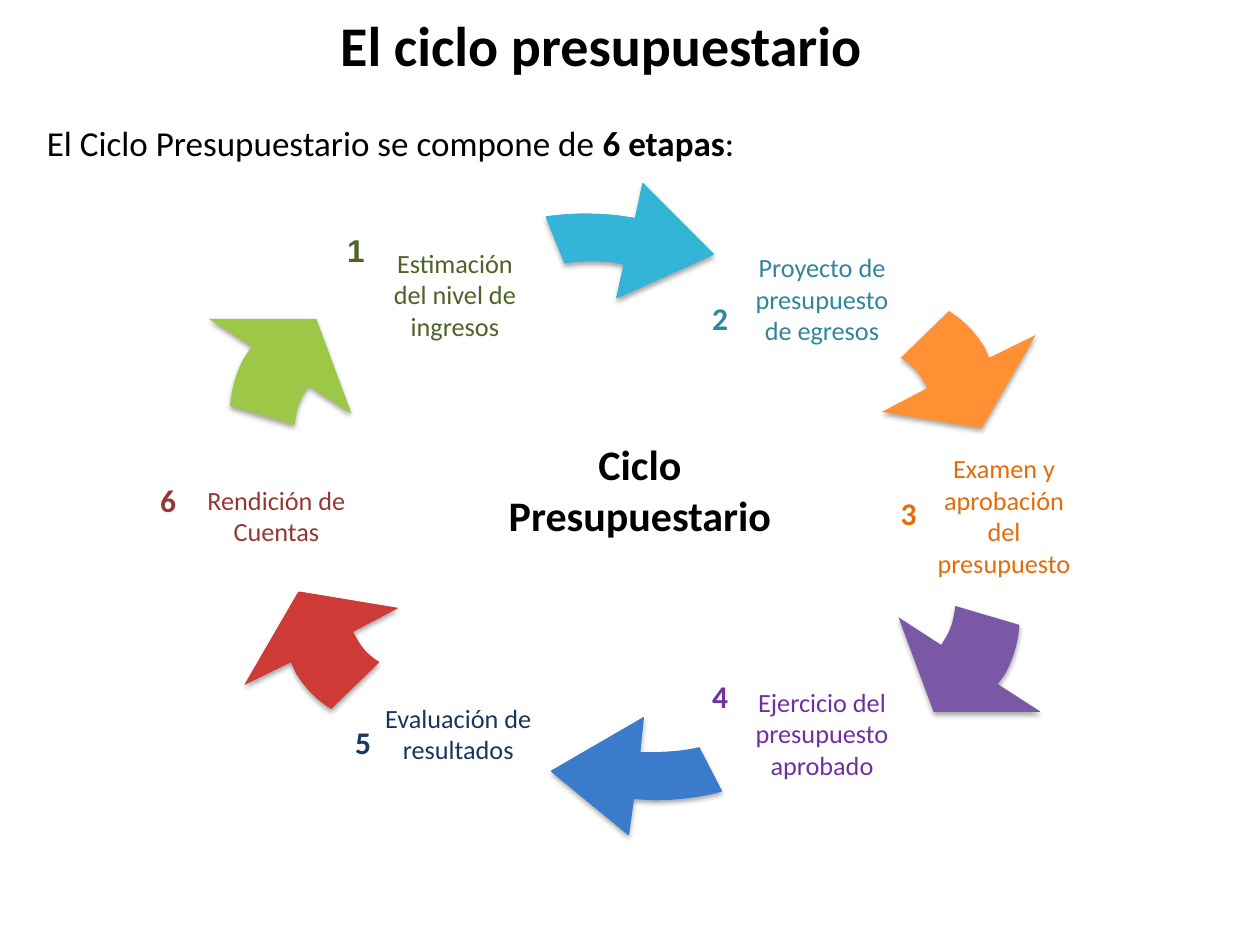
from dataclasses import dataclass
from math import cos, radians, sin

from lxml import etree
from pptx import Presentation
from pptx.dml.color import RGBColor
from pptx.enum.text import MSO_ANCHOR, MSO_AUTO_SIZE, PP_ALIGN
from pptx.oxml.ns import qn
from pptx.util import Pt

CENTER, LEFT, JUSTIFY = PP_ALIGN.CENTER, PP_ALIGN.LEFT, PP_ALIGN.JUSTIFY
TOP, MIDDLE = MSO_ANCHOR.TOP, MSO_ANCHOR.MIDDLE
FIXED_SIZE = MSO_AUTO_SIZE.NONE
FONT = "Calibri"
COLORS = {
    "black": "000000", "olive": "4F6228", "teal": "31859C", "orange": "E46C0A",
    "purple": "7030A0", "navy": "17375E", "maroon": "953735",
}
CURVE_STEPS = 12
LABEL_SIZE = (87.84, 60.48)
NUMBER_SIZE = (23.04, 33.12)
WIDE, TALL = (236.2, 162.7), (162.7, 236.2)

Point = tuple[float, float]


@dataclass(frozen=True)
class Stage:
    number: str
    label: str
    color: str
    number_at: Point
    label_at: Point
    number_font: str = FONT


@dataclass(frozen=True)
class Arrow:
    """Outline order: inner head corner, inner curve, outer curve,
    outer head corner, outer barb, tip, inner barb."""
    shades: tuple[str, str]
    rotation: int
    frame_at: Point
    frame_size: Point
    outline: list[Point]


STAGES = [
    Stage("1", "Estimación del nivel de ingresos", "olive", (191.3, 128.3), (216, 137.8), "Arial"),
    Stage("2", "Proyecto de presupuesto de egresos", "teal", (399.8, 167.3), (425.8, 140.6)),
    Stage("3", "Examen y aprobación del presupuesto", "orange", (507.6, 278.7), (529.8, 264.5)),
    Stage("4", "Ejercicio del presupuesto aprobado", "purple", (399.8, 383.3), (425.8, 388.9)),
    Stage("5", "Evaluación de resultados", "navy", (195.8, 409.7), (217.9, 388.9)),
    Stage("6", "Rendición de Cuentas", "maroon", (84.4, 271.5), (114, 264.5)),
]

TOP_ARROW = [
    (356.4, 151.2), (349.9, 149.8), (340.6, 149), (331.2, 149), (322.6, 150.5),
    (311.8, 123.8), (325.4, 121.7), (339.1, 121.7), (352.8, 123.1),
    (362.9, 124.6), (367.2, 104.4), (408.2, 145.4), (352.1, 170.6),
]
UPPER_RIGHT_ARROW = [
    (529.9, 221.8), (527.8, 218.2), (524.9, 212.4), (520.6, 208.1), (514.8, 204.5),
    (542.2, 177.8), (550.8, 182.9), (557.3, 190.1), (562.3, 198),
    (565.2, 204.5), (591.8, 191.5), (560.9, 244.8), (504, 235.4),
]
LOWER_RIGHT_ARROW = [
    (537.8, 368.6), (540, 365), (543.6, 359.3), (545, 353.5), (545.8, 346.3),
    (582.5, 357.1), (581.8, 367.2), (578.9, 376.6), (574.6, 384.5),
    (570.2, 391), (594.7, 406.8), (533.5, 406.8), (513.4, 352.8),
]
BOTTOM_ARROW = [
    (365.8, 429.8), (372.2, 429.8), (381.6, 429.8), (391, 429.1), (399.6, 427),
    (412.6, 452.2), (399.6, 455.8), (385.9, 457.2), (372.2, 457.2),
    (362.2, 456.5), (359.3, 477.4), (314.6, 440.6), (367.9, 409.7),
]


def rotate(points: list[Point], center: Point, degrees: float) -> list[Point]:
    c, s = cos(radians(degrees)), sin(radians(degrees))
    return [(center[0] + (x - center[0]) * c - (y - center[1]) * s,
             center[1] + (x - center[0]) * s + (y - center[1]) * c) for x, y in points]


ARROWS = [
    Arrow(("37B1D2", "34B4D6"), 6, (226.1, 122.4), WIDE, TOP_ARROW),
    Arrow(("FF9034", "FF9136"), 60, (378.7, 139), TALL, UPPER_RIGHT_ARROW),
    Arrow(("7B58A6", "7C57A8"), 120, (391, 208.1), TALL, LOWER_RIGHT_ARROW),
    Arrow(("3D7CC7", "3A7CCB"), 180, (254.9, 294.5), WIDE, BOTTOM_ARROW),
    Arrow(("CB3E3A", "CE3B37"), 240, (190.1, 208.1), TALL,
          rotate(UPPER_RIGHT_ARROW, (365.75, 291.4), 180)),
    Arrow(("9BC348", "9DC746"), 300, (160.6, 145.4), TALL,
          rotate(LOWER_RIGHT_ARROW, (357.1, 294.5), 180)),
]


def bezier(controls: list[Point]) -> list[Point]:
    """Points along a cubic curve, both ends included."""
    points = []
    for step in range(CURVE_STEPS + 1):
        t = step / CURVE_STEPS
        weights = ((1 - t) ** 3, 3 * t * (1 - t) ** 2, 3 * t * t * (1 - t), t ** 3)
        points.append((sum(w * x for w, (x, _) in zip(weights, controls)),
                       sum(w * y for w, (_, y) in zip(weights, controls))))
    return points


def set_frame(shape, at: Point, size: Point) -> None:
    """Give a freeform a new frame while its outline stays in place."""
    left, top, width, height = map(Pt, at + size)
    for point in shape._element.iter(qn("a:pt")):
        point.set("x", str(int(point.get("x")) + shape.left - left))
        point.set("y", str(int(point.get("y")) + shape.top - top))
    for outline in shape._element.iter(qn("a:path")):
        outline.set("w", str(width))
        outline.set("h", str(height))
    shape.left, shape.top, shape.width, shape.height = left, top, width, height


def add_soft_shadow(shape) -> None:
    shape.shadow.inherit = False
    effects = shape._element.spPr.find(qn("a:effectLst"))
    shadow = etree.SubElement(effects, qn("a:outerShdw"), blurRad=str(Pt(3.1)),
                              dist=str(Pt(1.8)), dir="5400000", rotWithShape="0")
    black = etree.SubElement(shadow, qn("a:srgbClr"), val=COLORS["black"])
    etree.SubElement(black, qn("a:alpha"), val="35000")


def draw_arrow(slide, arrow: Arrow) -> None:
    corners = arrow.outline
    curve = [corners[0], *bezier(corners[1:5]), *bezier(corners[5:9]), *corners[9:]]
    center = tuple(a + d / 2 for a, d in zip(arrow.frame_at, arrow.frame_size))
    points = [(Pt(x), Pt(y)) for x, y in rotate(curve, center, -arrow.rotation)]
    builder = slide.shapes.build_freeform(*points[0])
    builder.add_line_segments(points[1:], close=True)
    shape = builder.convert_to_shape()
    set_frame(shape, arrow.frame_at, arrow.frame_size)
    shape.rotation = arrow.rotation
    shape.fill.gradient()
    shape.fill.gradient_angle = 90
    for stop, shade in zip(shape.fill.gradient_stops, arrow.shades):
        stop.color.rgb = RGBColor.from_string(shade)
    shape.line.fill.background()
    add_soft_shadow(shape)


def add_run(paragraph, text: str, size: float, color: str = "black",
            bold: bool = False, font: str = FONT) -> None:
    run = paragraph.add_run()
    run.text = text
    run.font.name, run.font.size, run.font.bold = font, Pt(size), bold
    run.font.color.rgb = RGBColor.from_string(COLORS[color])


def add_text(slide, at: Point, size: Point, align, anchor, inset: bool = True):
    """Place an empty text box and return its first paragraph."""
    frame = slide.shapes.add_textbox(*map(Pt, at + size)).text_frame
    frame.word_wrap = True
    frame.vertical_anchor = anchor
    if not inset:
        frame.margin_left = frame.margin_right = frame.margin_top = frame.margin_bottom = 0
    frame.paragraphs[0].alignment = align
    return frame.paragraphs[0]


def fit_placeholder(placeholder, at: Point, size: Point, align, anchor):
    """Move a placeholder and return its first paragraph."""
    placeholder.left, placeholder.top, placeholder.width, placeholder.height = map(Pt, at + size)
    frame = placeholder.text_frame
    frame.auto_size, frame.vertical_anchor = FIXED_SIZE, anchor
    frame.paragraphs[0].alignment = align
    return frame.paragraphs[0]


def draw_stage(slide, stage: Stage) -> None:
    label = add_text(slide, stage.label_at, LABEL_SIZE, CENTER, MIDDLE, inset=False)
    add_run(label, stage.label, 15, stage.color)
    number = add_text(slide, stage.number_at, NUMBER_SIZE, LEFT, TOP)
    add_run(number, stage.number, 18, stage.color, True, stage.number_font)


def main() -> None:
    deck = Presentation()
    deck.slide_width, deck.slide_height = Pt(720), Pt(540)
    slide = deck.slides.add_slide(deck.slide_layouts[1])
    title = fit_placeholder(slide.shapes.title, (19.5, -2.2), (648, 54.7), CENTER, MIDDLE)
    add_run(title, "El ciclo presupuestario", 32, bold=True)
    intro = fit_placeholder(slide.placeholders[1], (19.6, 65.9), (674.6, 124.6), JUSTIFY, TOP)
    properties = intro._p.get_or_add_pPr()
    properties.set("marL", "0")
    properties.set("indent", "0")
    etree.SubElement(properties, qn("a:buNone"))
    add_run(intro, "El Ciclo Presupuestario se compone de ", 20)
    add_run(intro, "6 etapas", 20, bold=True)
    add_run(intro, ":", 20)
    for arrow in ARROWS:
        draw_arrow(slide, arrow)
    for stage in STAGES:
        draw_stage(slide, stage)
    cycle = add_text(slide, (263.8, 247.3), (203.8, 65.5), CENTER, TOP)
    add_run(cycle, "Ciclo Presupuestario", 24, bold=True)
    deck.save("out.pptx")


if __name__ == "__main__":
    main()
